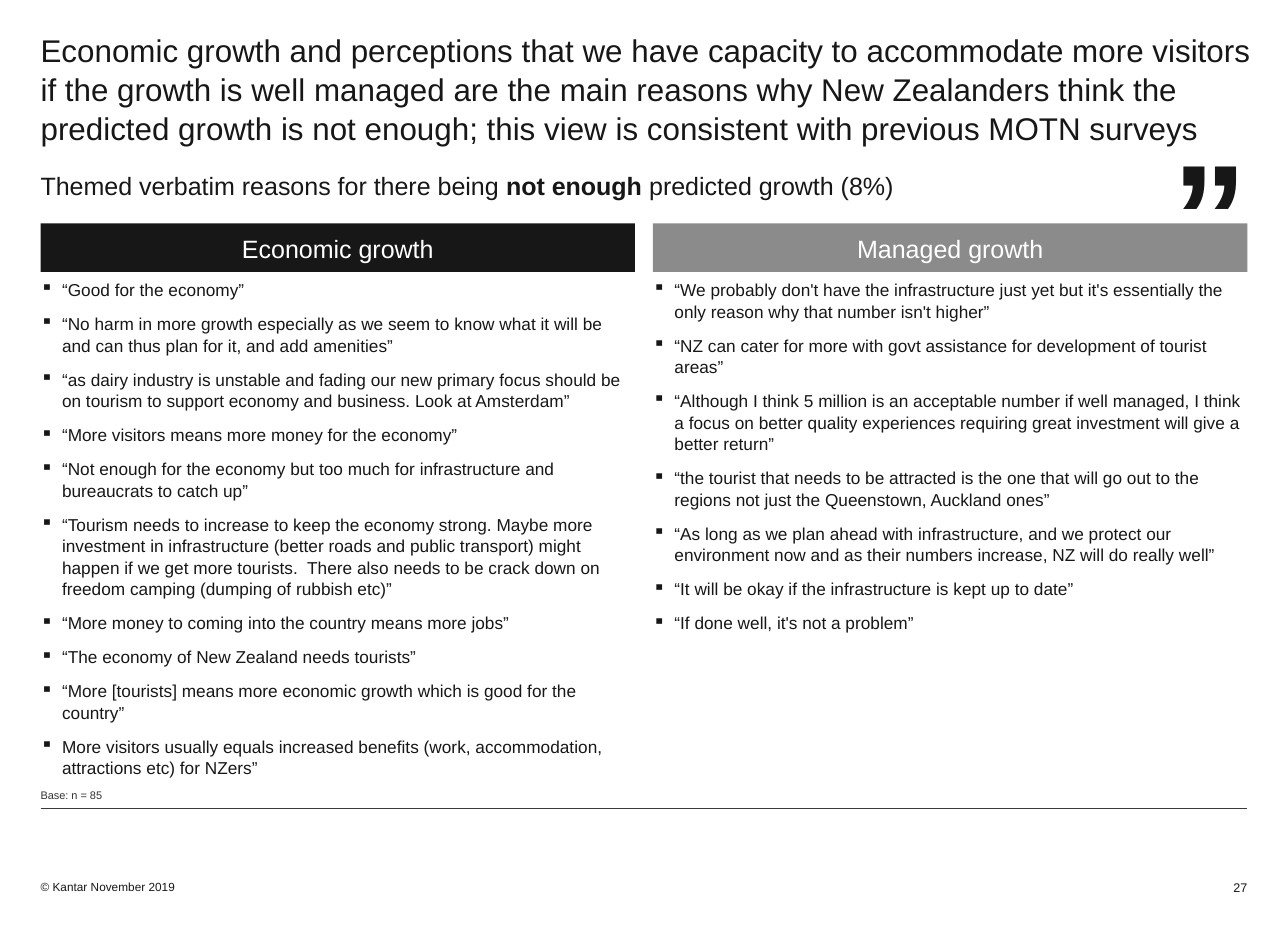
from dataclasses import dataclass

from lxml import etree
from pptx import Presentation
from pptx import util as u
from pptx.dml.color import RGBColor
from pptx.enum import shapes, text
from pptx.oxml.ns import qn

WIDTH, HEIGHT = u.Inches(11.42), u.Inches(8.27)
INK, GREY, WHITE = "171717", "8B8B8B", "FFFFFF"
LEFT, RIGHT = 3.15, 96.85
COLUMN, STEP = 46.15, 47.55
LEADING = 1.04
ALIGN, ANCHOR = text.PP_ALIGN, text.MSO_ANCHOR


@dataclass(frozen=True)
class Area:
    """A rectangle in percent of the slide's width and height."""
    left: float
    top: float
    width: float
    height: float


@dataclass(frozen=True)
class Theme:
    heading: str
    fill: str
    quotes: tuple[str, ...]


@dataclass(frozen=True)
class Span:
    words: str
    bold: bool = False


THEMES = (
    Theme("Economic growth", INK, (
        "“Good for the economy”",
        "“No harm in more growth especially as we seem to know what it will be and can thus "
        "plan for it, and add amenities”",
        "“as dairy industry is unstable and fading our new primary focus should be on tourism "
        "to support economy and business. Look at Amsterdam”",
        "“More visitors means more money for the economy”",
        "“Not enough for the economy but too much for infrastructure and bureaucrats to catch up”",
        "“Tourism needs to increase to keep the economy strong. Maybe more investment in "
        "infrastructure (better roads and public transport) might happen if we get more "
        "tourists.  There also needs to be crack down on freedom camping (dumping of rubbish etc)”",
        "“More money to coming into the country means more jobs”",
        "“The economy of New Zealand needs tourists”",
        "“More [tourists] means more economic growth which is good for the country”",
        "More visitors usually equals increased benefits (work, accommodation, attractions etc) "
        "for NZers”",
    )),
    Theme("Managed growth", GREY, (
        "“We probably don't have the infrastructure just yet but it's essentially the only "
        "reason why that number isn't higher”",
        "“NZ can cater for more with govt assistance for development of tourist areas”",
        "“Although I think 5 million is an acceptable number if well managed, I think a focus "
        "on better quality experiences requiring great investment will give a better return”",
        "“the tourist that needs to be attracted is the one that will go out to the regions "
        "not just the Queenstown, Auckland ones”",
        "“As long as we plan ahead with infrastructure, and we protect our environment now and "
        "as their numbers increase, NZ will do really well”",
        "“It will be okay if the infrastructure is kept up to date”",
        "“If done well, it's not a problem”",
    )),
)


def across(share: float) -> int:
    return round(WIDTH * share / 100)


def down(share: float) -> int:
    return round(HEIGHT * share / 100)


def bounds(area: Area) -> tuple[int, int, int, int]:
    return across(area.left), down(area.top), across(area.width), down(area.height)


def colour(value: str) -> RGBColor:
    return RGBColor.from_string(value)


def add_bullet(para) -> None:
    properties = para._p.get_or_add_pPr()
    properties.set("marL", str(u.Inches(0.19)))
    properties.set("indent", str(-u.Inches(0.19)))
    etree.SubElement(properties, qn("a:buChar")).set("char", "▪")


def write(shape, *paragraphs, size: float, ink: str = INK, align=ALIGN.LEFT,
          anchor=ANCHOR.TOP, inset_top: float = 0, after: float = 0,
          leading: float = 1, bullets: bool = False) -> None:
    """Fill a shape with paragraphs, each one a sequence of spans."""
    frame = shape.text_frame
    frame.word_wrap = True
    frame.auto_size = text.MSO_AUTO_SIZE.NONE
    frame.vertical_anchor = anchor
    frame.margin_left = frame.margin_right = frame.margin_bottom = 0
    frame.margin_top = u.Inches(inset_top)
    for index, spans in enumerate(paragraphs):
        para = frame.add_paragraph() if index else frame.paragraphs[0]
        if bullets:
            add_bullet(para)
        para.alignment = align
        para.line_spacing = leading
        para.space_after = u.Pt(after)
        for span in spans:
            run = para.add_run()
            run.text = span.words
            run.font.name = "Arial"
            run.font.size = u.Pt(size)
            run.font.bold = span.bold
            run.font.color.rgb = colour(ink)


def add_text(page, area: Area, *spans: Span, **style) -> None:
    write(page.shapes.add_textbox(*bounds(area)), spans, **style)


def add_theme(page, theme: Theme, left: float) -> None:
    header = page.shapes.add_shape(shapes.MSO_SHAPE.RECTANGLE,
                                   *bounds(Area(left, 23.94, COLUMN, 5.2)))
    header.shadow.inherit = False
    header.fill.solid()
    header.fill.fore_color.rgb = colour(theme.fill)
    header.line.fill.background()
    write(header, [Span(theme.heading)], size=16, ink=WHITE,
          align=ALIGN.CENTER, anchor=ANCHOR.MIDDLE, leading=LEADING)
    body = page.shapes.add_textbox(*bounds(Area(left, 29.87, COLUMN, 52.42)))
    write(body, *([Span(quote)] for quote in theme.quotes), size=11, after=8,
          leading=LEADING, bullets=True)


def add_rule(page, top: float) -> None:
    rule = page.shapes.add_connector(shapes.MSO_CONNECTOR.STRAIGHT, across(LEFT), down(top),
                                     across(RIGHT), down(top))
    rule.line.color.rgb = colour("3A3A3A")
    rule.line.width = u.Pt(0.75)
    etree.SubElement(rule._element.spPr, qn("a:effectLst"))


def main() -> None:
    deck = Presentation()
    deck.slide_width, deck.slide_height = WIDTH, HEIGHT
    page = deck.slides.add_slide(deck.slide_layouts[5])

    title = page.shapes.title
    title.left, title.top, title.width, title.height = bounds(Area(LEFT, 0, 95, 15))
    write(title, [Span(
        "Economic growth and perceptions that we have capacity to accommodate more visitors "
        "if the growth is well managed are the main reasons why New Zealanders think the "
        "predicted growth is not enough; this view is consistent with previous MOTN surveys",
    )], size=20, inset_top=0.26, leading=LEADING)
    add_text(page, Area(LEFT, 15, RIGHT - LEFT, 8.5),
             Span("Themed verbatim reasons for there being "), Span("not enough ", bold=True),
             Span("predicted growth (8%)"), size=16, inset_top=0.26, leading=LEADING)

    for index, theme in enumerate(THEMES):
        add_theme(page, theme, LEFT + index * STEP)

    add_text(page, Area(89.06, 12.09, 7.79, 10.16), Span("”", bold=True), size=96,
             align=ALIGN.RIGHT, leading=LEADING)
    add_text(page, Area(LEFT, 83.19, 82.75, 2.78), Span("Base: n = 85"), size=7,
             ink="333333", anchor=ANCHOR.BOTTOM)
    add_rule(page, 86.7)
    add_text(page, Area(LEFT, 92.5, 24.34, 3.26), Span("© Kantar November 2019"), size=7.5,
             anchor=ANCHOR.BOTTOM)
    add_text(page, Area(91.33, 92.26, 5.52, 3.63), Span("27"), size=8, align=ALIGN.RIGHT,
             anchor=ANCHOR.BOTTOM)
    deck.save("out.pptx")


if __name__ == "__main__":
    main()
